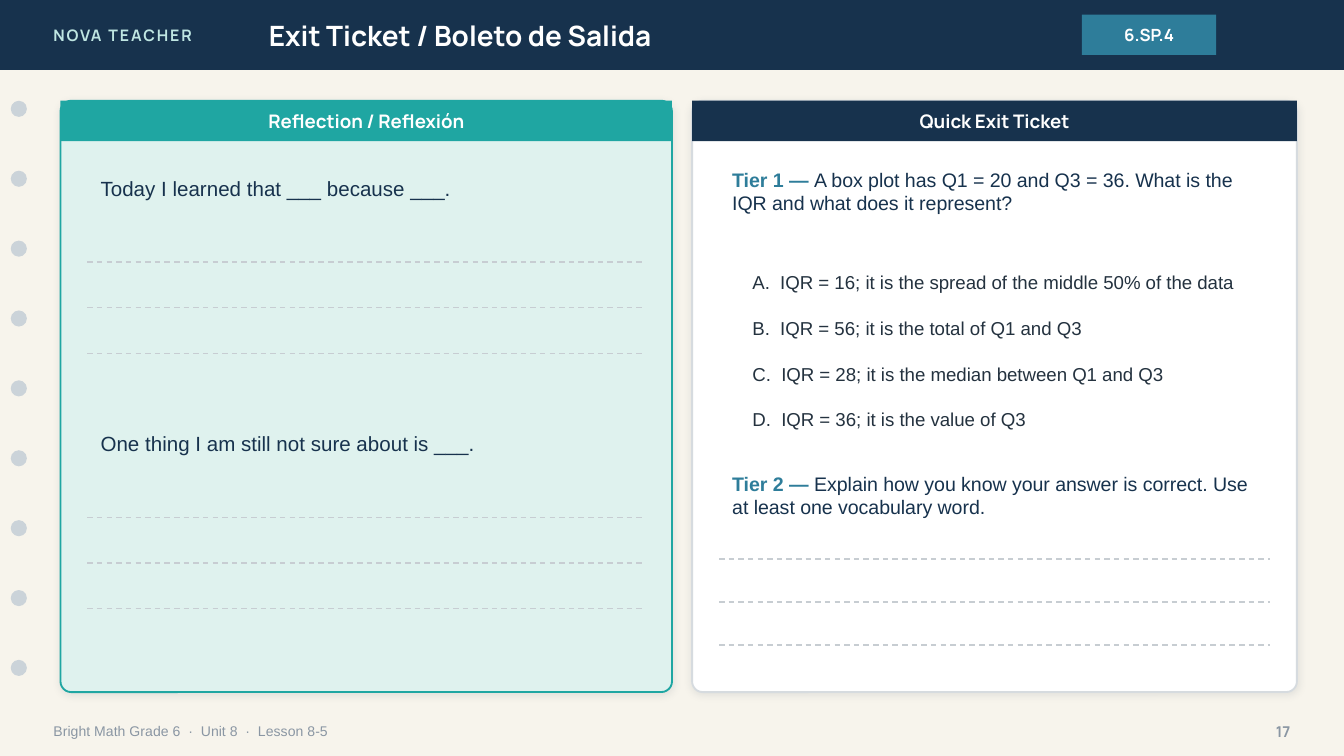
from lxml import etree
from pptx import Presentation
from pptx.dml.color import RGBColor
from pptx.enum import dml, shapes, text
from pptx.oxml import ns
from pptx.util import Pt

COLORS = {
    "paper": "F7F4EC", "navy": "17324D", "blue": "2E7D9A", "teal": "1FA6A2",
    "mint": "DFF2EE", "pale_teal": "BFE6E2", "white": "FFFFFF", "hole": "CBD3D9",
    "border": "D6DBDF", "rule": "C7CDD2", "muted": "8A96A3", "ink": "24323F",
    "shadow": "1C2E42",
}
RGB = {name: RGBColor.from_string(value) for name, value in COLORS.items()}
SHAPE = shapes.MSO_SHAPE
LEFT, CENTER, RIGHT = text.PP_ALIGN.LEFT, text.PP_ALIGN.CENTER, text.PP_ALIGN.RIGHT
TOP, MIDDLE = text.MSO_ANCHOR.TOP, text.MSO_ANCHOR.MIDDLE

prs = Presentation()
prs.slide_width, prs.slide_height = Pt(720), Pt(405)
s = prs.slides.add_slide(prs.slide_layouts[5])
s.background.fill.solid()
s.background.fill.fore_color.rgb = RGB["paper"]


def add_block(kind, x, y, w, h, fill):
    sp = s.shapes.add_shape(kind, Pt(x), Pt(y), Pt(w), Pt(h))
    sp.shadow.inherit = False
    sp.fill.solid()
    sp.fill.fore_color.rgb = RGB[fill]
    sp.line.fill.background()
    return sp


def write(sp, runs, size, font="Arial", align=LEFT, anchor=MIDDLE):
    """Fill a shape with one paragraph of (text, colour, bold) runs."""
    tf = sp.text_frame
    tf.word_wrap = True
    tf.auto_size = text.MSO_AUTO_SIZE.NONE
    tf.vertical_anchor = anchor
    p = tf.paragraphs[0]
    p.alignment = align
    for content, color, bold in runs:
        r = p.add_run()
        r.text = content
        r.font.name, r.font.size, r.font.bold = font, Pt(size), bold
        r.font.color.rgb = RGB[color]
    return p


# Header
bar = add_block(SHAPE.RECTANGLE, 0, 0, 720, 37.44, "navy")
title = s.shapes.title
title.left, title.top, title.width, title.height = Pt(136.8), Pt(0), Pt(403.2), Pt(37.44)
write(title, [("Exit Ticket / Boleto de Salida", "white", True)], 15, "Manrope")
bar.element.addnext(title.element)

brand = s.shapes.add_textbox(Pt(21.6), Pt(0), Pt(172.8), Pt(37.44))
p = write(brand, [("NOVA TEACHER", "pale_teal", True)], 8.5, "Manrope")
p.runs[0].font._element.set("spc", "100")

standard = add_block(SHAPE.RECTANGLE, 579.6, 7.92, 72, 21.6, "blue")
write(standard, [("6.SP.4", "white", True)], 9, "Manrope", CENTER)

# Binder holes
for i in range(9):
    add_block(SHAPE.OVAL, 5.76, 54 + 37.44 * i, 8.64, 8.64, "hole")

# Footer
footer = s.shapes.add_textbox(Pt(21.6), Pt(381.6), Pt(504), Pt(20.16))
write(footer, [("Bright Math Grade 6  ·  Unit 8  ·  Lesson 8-5", "muted", False)], 7.5)
number = s.shapes.add_textbox(Pt(662.4), Pt(381.6), Pt(36), Pt(20.16))
write(number, [("17", "muted", True)], 8, "Manrope", RIGHT)

# Cards
for x, w, fill, border, band, heading in [
    (32.4, 327.6, "mint", "teal", "teal", "Reflection / Reflexión"),
    (370.8, 324, "white", "border", "navy", "Quick Exit Ticket"),
]:
    card = add_block(SHAPE.ROUNDED_RECTANGLE, x, 54, w, 316.8, fill)
    card.adjustments[0] = 0.018
    card.line.color.rgb = RGB[border]
    card.line.width = Pt(1)
    effects = card.element.spPr.find(ns.qn("a:effectLst"))
    shadow = etree.SubElement(effects, ns.qn("a:outerShdw"), blurRad=str(Pt(4)),
                              dist=str(Pt(1)), dir="5400000", rotWithShape="0")
    tint = etree.SubElement(shadow, ns.qn("a:srgbClr"), val=COLORS["shadow"])
    etree.SubElement(tint, ns.qn("a:alpha"), val="10000")
    header = add_block(SHAPE.RECTANGLE, x, 54, w, 21.6, band)
    write(header, [(heading, "white", True)], 10, "Manrope", CENTER)

# Reflection prompts
for y, prompt in [(86.4, "Today I learned that ___ because ___."),
                  (223.2, "One thing I am still not sure about is ___.")]:
    box = s.shapes.add_textbox(Pt(46.8), Pt(y), Pt(298.8), Pt(28.8))
    write(box, [(prompt, "navy", False)], 11)

# Exit ticket questions and choices
for y, h, tier, question in [
    (86.4, 50.4, "Tier 1 — ",
     "A box plot has Q1 = 20 and Q3 = 36. What is the IQR and what does it represent?"),
    (249.12, 39.6, "Tier 2 — ",
     "Explain how you know your answer is correct. Use at least one vocabulary word."),
]:
    box = s.shapes.add_textbox(Pt(385.2), Pt(y), Pt(295.2), Pt(h))
    write(box, [(tier, "blue", True), (question, "navy", False)], 10.5, anchor=TOP)

for i, choice in enumerate([
    "A.  IQR = 16; it is the spread of the middle 50% of the data",
    "B.  IQR = 56; it is the total of Q1 and Q3",
    "C.  IQR = 28; it is the median between Q1 and Q3",
    "D.  IQR = 36; it is the value of Q3",
]):
    box = s.shapes.add_textbox(Pt(396), Pt(140.4 + 24.48 * i), Pt(280.8), Pt(21.6))
    write(box, [(choice, "ink", False)], 10)

# Dashed writing lines, three per answer
for x1, x2, y, gap in [(46.8, 345.6, 140.4, 24.48),
                       (46.8, 345.6, 277.2, 24.48),
                       (385.2, 680.4, 299.52, 23.04)]:
    for i in range(3):
        line_y = Pt(y + gap * i)
        rule = s.shapes.add_connector(shapes.MSO_CONNECTOR.STRAIGHT,
                                      Pt(x1), line_y, Pt(x2), line_y)
        rule.line.color.rgb = RGB["rule"]
        rule.line.width = Pt(0.75)
        rule.line.dash_style = dml.MSO_LINE.DASH
        etree.SubElement(rule.element.spPr, ns.qn("a:effectLst"))

prs.save("out.pptx")
